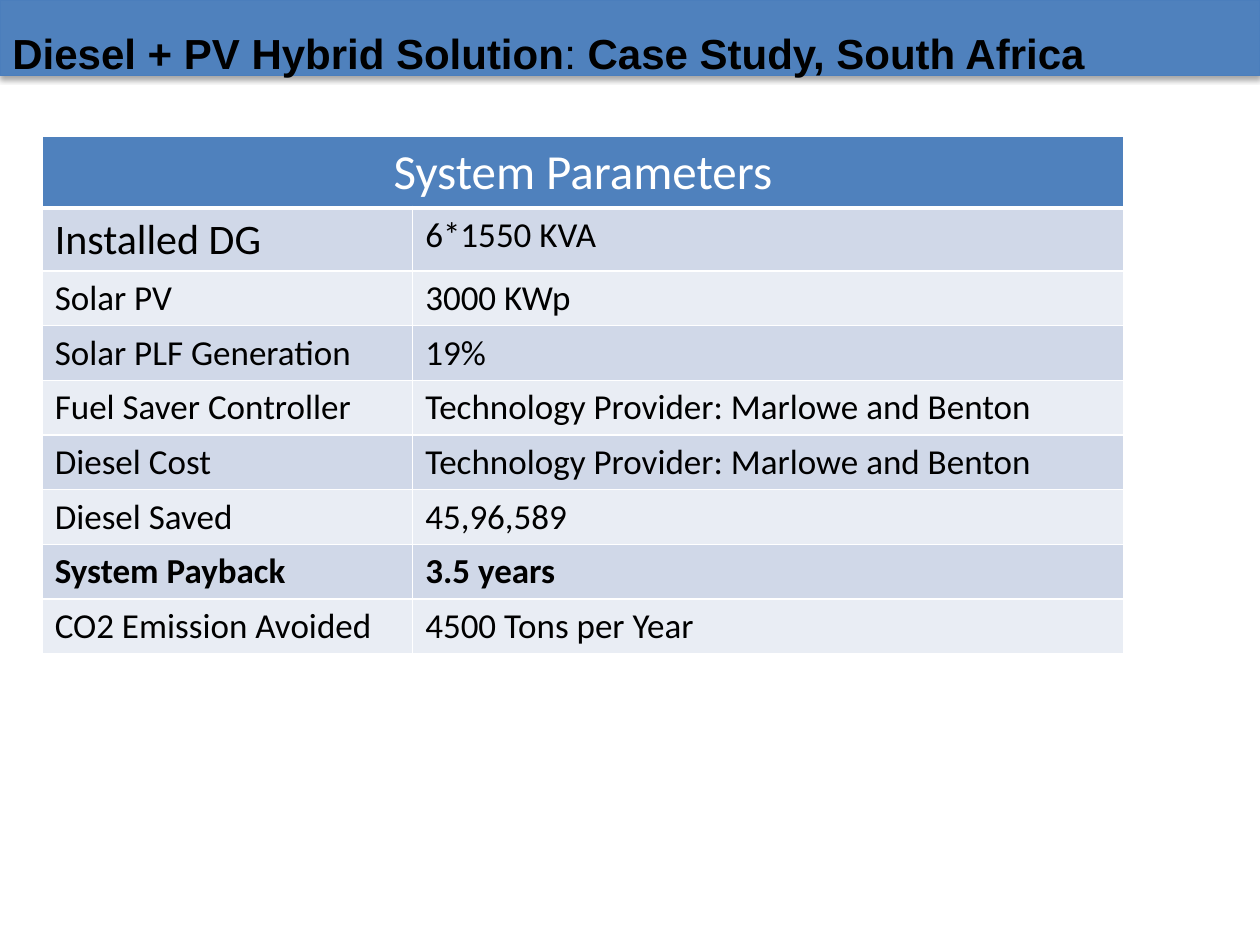
import pptx
import pptx.dml.color
import pptx.enum.shapes
import pptx.enum.text
import pptx.oxml.ns
import pptx.util
from lxml import etree

Cm = pptx.util.Cm
Pt = pptx.util.Pt
RGBColor = pptx.dml.color.RGBColor
qn = pptx.oxml.ns.qn

BLUE = RGBColor(0x4F, 0x81, 0xBD)
EDGE_BLUE = RGBColor(0x4B, 0x7E, 0xBC)
DARK_BAND = RGBColor(0xD0, 0xD8, 0xE8)
LIGHT_BAND = RGBColor(0xE9, 0xED, 0xF4)
BLACK = RGBColor(0, 0, 0)
WHITE = RGBColor(0xFF, 0xFF, 0xFF)

PROVIDER = "Technology Provider: Marlowe and Benton"
PARAMETERS = [
    ("Installed DG", "6*1550 KVA"),
    ("Solar PV", "3000 KWp"),
    ("Solar PLF Generation", "19%"),
    ("Fuel Saver Controller", PROVIDER),
    ("Diesel Cost", PROVIDER),
    ("Diesel Saved", "45,96,589"),
    ("System Payback", "3.5 years"),
    ("CO2 Emission Avoided", "4500 Tons per Year"),
]


def add_text(para, text, *, size=20, font="Calibri", color=BLACK, bold=False):
    span = para.add_run()
    span.text = text
    span.font.size = Pt(size)
    span.font.name = font
    span.font.color.rgb = color
    span.font.bold = bold


def add_title_bar(page, width):
    bar = page.shapes.add_shape(
        pptx.enum.shapes.MSO_SHAPE.RECTANGLE, 0, 0, width, Cm(1.52))
    bar.fill.solid()
    bar.fill.fore_color.rgb = BLUE
    bar.line.color.rgb = EDGE_BLUE
    bar.line.width = Pt(0.75)
    # Soft shadow falling straight down
    bar.shadow.inherit = False
    effects = bar._element.spPr.find(qn("a:effectLst"))
    shadow = etree.SubElement(
        effects, qn("a:outerShdw"), blurRad=str(Pt(3.1)), dist=str(Pt(1.8)),
        dir="5400000", rotWithShape="0")
    color = etree.SubElement(shadow, qn("a:srgbClr"), val=str(BLACK))
    etree.SubElement(color, qn("a:alpha"), val="35000")


def add_title(page):
    box = page.shapes.add_textbox(Cm(0), Cm(0.43), Cm(22.66), Cm(1.28))
    box.text_frame.word_wrap = True
    para = box.text_frame.paragraphs[0]
    for text, bold in [("Diesel + PV Hybrid Solution", True), (": ", False),
                       ("Case Study, South Africa", True)]:
        add_text(para, text, size=24, font="Arial", bold=bold)


def set_borders(cell, top=1, bottom=1):
    widths = {"a:lnL": 1, "a:lnR": 1, "a:lnT": top, "a:lnB": bottom}
    properties = cell._tc.get_or_add_tcPr()
    for position, (tag, width) in enumerate(widths.items()):
        line = etree.Element(qn(tag), w=str(Pt(width)))
        fill = etree.SubElement(line, qn("a:solidFill"))
        etree.SubElement(fill, qn("a:srgbClr"), val=str(WHITE))
        properties.insert(position, line)


def fill_cell(cell, color, **borders):
    cell.fill.solid()
    cell.fill.fore_color.rgb = color
    set_borders(cell, **borders)


def add_parameter_table(page):
    row_count = len(PARAMETERS) + 1
    table = page.shapes.add_table(
        row_count, 2, Cm(0.85), Cm(2.75), Cm(21.8), Cm(1.04 * row_count)).table
    for column, width in zip(table.columns, (7.47, 14.33)):
        column.width = Cm(width)

    # Header across both columns
    header = table.cell(0, 0)
    for cell in table.rows[0].cells:
        fill_cell(cell, BLUE, bottom=3)
    header.merge(table.cell(0, 1))
    para = header.text_frame.paragraphs[0]
    para.alignment = pptx.enum.text.PP_ALIGN.CENTER
    add_text(para, "System Parameters", size=28, color=WHITE)

    # Banded parameter rows
    for row, values in enumerate(PARAMETERS, start=1):
        for column, text in enumerate(values):
            cell = table.cell(row, column)
            fill_cell(cell, DARK_BAND if row % 2 else LIGHT_BAND,
                      top=3 if row == 1 else 1)
            add_text(cell.text_frame.paragraphs[0], text,
                     size=24 if text == "Installed DG" else 20,
                     bold=values[0] == "System Payback")


def main():
    deck = pptx.Presentation()
    deck.slide_width = Cm(25.4)
    deck.slide_height = Cm(19.05)
    page = deck.slides.add_slide(deck.slide_layouts[6])
    add_title_bar(page, deck.slide_width)
    add_title(page)
    add_parameter_table(page)
    deck.save("out.pptx")


if __name__ == "__main__":
    main()
